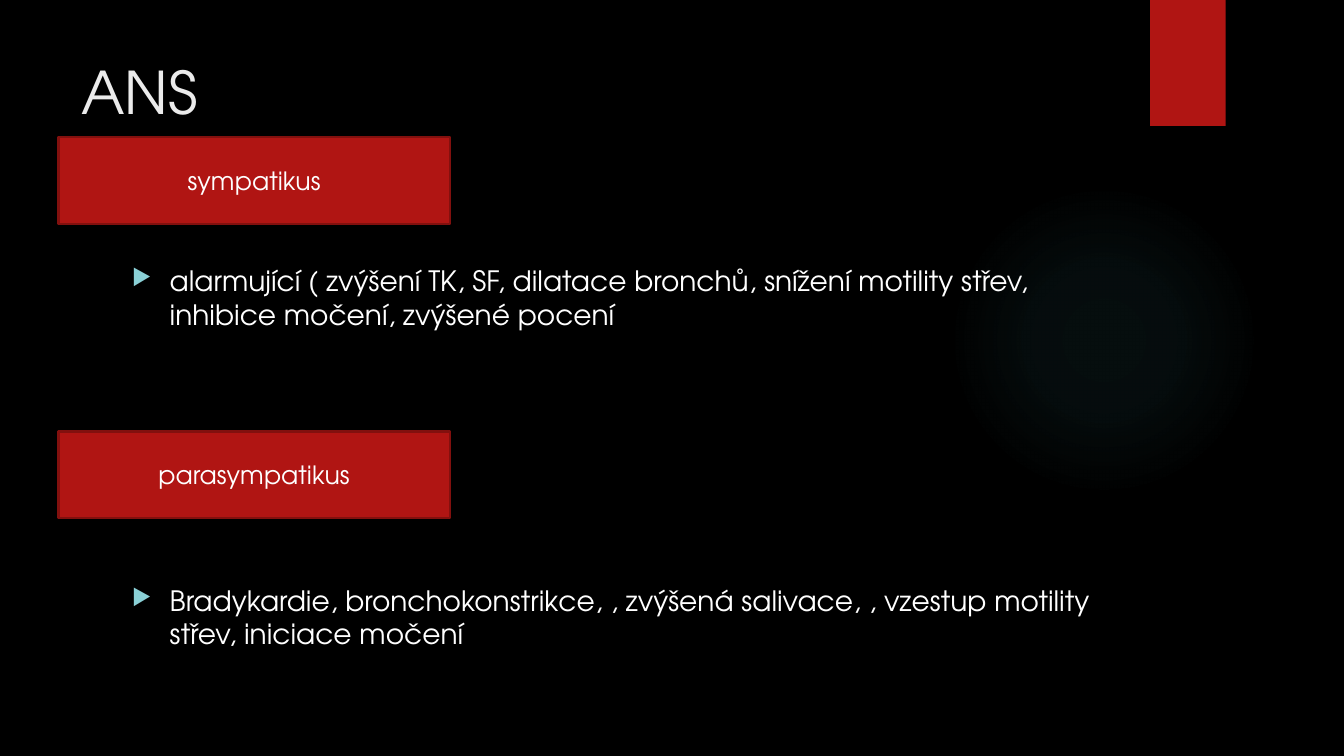
import lxml.etree
import pptx
import pptx.dml.color
import pptx.enum.shapes
import pptx.enum.text
import pptx.oxml.ns
import pptx.util

Pt = pptx.util.Pt
ALIGN = pptx.enum.text.PP_ALIGN
ANCHOR = pptx.enum.text.MSO_ANCHOR
SHAPE = pptx.enum.shapes.MSO_SHAPE

FONT = "TeX Gyre Adventor"
RED = "B01513"
DARK_RED = "82100E"
WHITE = "FFFFFF"
GLOW_COLOR = "50B9C1"
GLOW_STOPS = ((0, 7), (36, 6), (69, 0))  # position and opacity in percent
BULLET_COLOR = "8AD0D6"
BULLET_INDENT = 27

BRANCHES = (("sympatikus", 97.9), ("parasympatikus", 308.2))
EFFECTS = (
    "alarmující ( zvýšení TK, SF, dilatace bronchů, snížení motility střev, "
    "inhibice močení, zvýšené pocení",
    "Bradykardie, bronchokonstrikce, , zvýšená salivace, , vzestup motility "
    "střev, iniciace močení",
)
EFFECT_GAP = 180


def color(value):
    return pptx.dml.color.RGBColor.from_string(value)


def add_element(parent, tag, **attributes):
    element = lxml.etree.SubElement(parent, pptx.oxml.ns.qn(tag))
    for name, value in attributes.items():
        element.set(name, str(value))
    return element


def add_bullet(paragraph):
    properties = paragraph._p.get_or_add_pPr()
    properties.set("marL", str(Pt(BULLET_INDENT)))
    properties.set("indent", str(-Pt(BULLET_INDENT)))
    bullet_color = add_element(properties, "a:buClr")
    add_element(bullet_color, "a:srgbClr", val=BULLET_COLOR)
    add_element(properties, "a:buSzPct", val=80000)
    add_element(properties, "a:buChar", char="▶")


def write_text(shape, *texts, size, text_color=WHITE, align=ALIGN.LEFT,
               anchor=ANCHOR.TOP, bullet=False, gap=0):
    frame = shape.text_frame
    frame.word_wrap = True
    frame.vertical_anchor = anchor
    for index, text in enumerate(texts):
        paragraph = frame.add_paragraph() if index else frame.paragraphs[0]
        if bullet:
            add_bullet(paragraph)
        paragraph.alignment = align
        if index:
            paragraph.space_before = Pt(gap)
        run = paragraph.add_run()
        run.text = text
        run.font.name = FONT
        run.font.size = Pt(size)
        run.font.color.rgb = color(text_color)


def add_text_box(slide, left, top, width, height, *texts, **text_format):
    box = slide.shapes.add_textbox(Pt(left), Pt(top), Pt(width), Pt(height))
    write_text(box, *texts, **text_format)


def add_block(slide, kind, left, top, width, height, fill=RED, line=None):
    shape = slide.shapes.add_shape(kind, Pt(left), Pt(top), Pt(width), Pt(height))
    shape.shadow.inherit = False
    shape.fill.solid()
    shape.fill.fore_color.rgb = color(fill)
    if line:
        shape.line.color.rgb = color(line)
        shape.line.width = Pt(1.5)
    else:
        shape.line.fill.background()
    return shape


def add_glow(slide, left, top, diameter):
    shape = add_block(slide, SHAPE.OVAL, left, top, diameter, diameter, GLOW_COLOR)
    # Radial gradient that fades out towards the rim
    properties = shape._element.spPr
    gradient = add_element(properties, "a:gradFill", rotWithShape=1)
    stops = add_element(gradient, "a:gsLst")
    for position, opacity in GLOW_STOPS:
        stop = add_element(stops, "a:gs", pos=position * 1000)
        stop_color = add_element(stop, "a:srgbClr", val=GLOW_COLOR)
        add_element(stop_color, "a:alpha", val=opacity * 1000)
    circle = add_element(gradient, "a:path", path="circle")
    add_element(circle, "a:fillToRect", l=50000, t=50000, r=50000, b=50000)
    solid = properties.find(pptx.oxml.ns.qn("a:solidFill"))
    properties.replace(solid, gradient)


def main():
    presentation = pptx.Presentation()
    presentation.slide_width = Pt(960)
    presentation.slide_height = Pt(540)
    slide = presentation.slides.add_slide(presentation.slide_layouts[6])
    slide.background.fill.solid()
    slide.background.fill.fore_color.rgb = color("000000")

    # Backdrop glow and ribbon
    add_glow(slide, 677.5, 131.8, 221.8)
    add_block(slide, SHAPE.RECTANGLE, 821.5, 0, 54, 90)

    # Title and effects
    add_text_box(slide, 51.1, 36, 740.9, 110.2, "ANS", size=42, text_color="EBEBEB")
    add_text_box(slide, 87.1, 185, 704.2, 306.7, *EFFECTS, size=20, bullet=True,
                 gap=EFFECT_GAP)

    # Branch headings
    for name, top in BRANCHES:
        heading = add_block(slide, SHAPE.RECTANGLE, 41.8, top, 279.4, 61.9,
                            line=DARK_RED)
        write_text(heading, name, size=18, align=ALIGN.CENTER, anchor=ANCHOR.MIDDLE)

    presentation.save("out.pptx")


if __name__ == "__main__":
    main()
